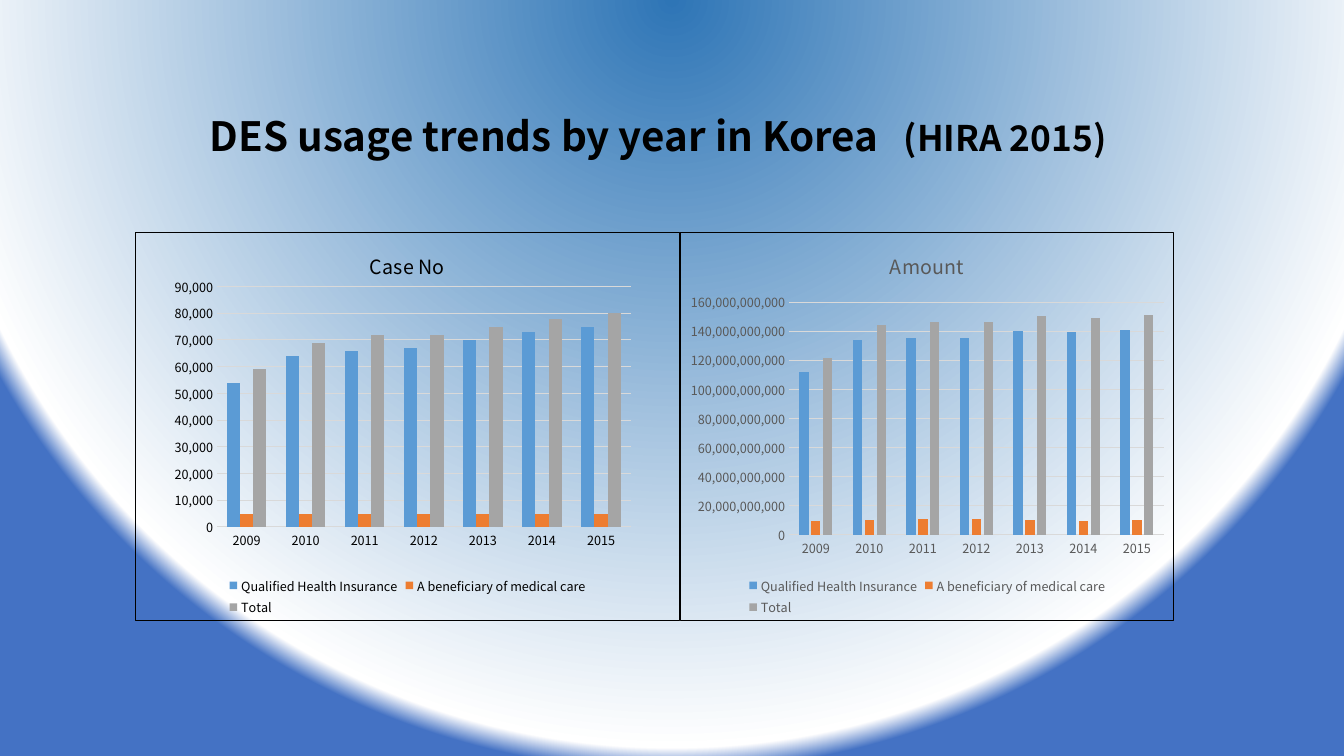
from pptx import Presentation
from pptx.chart.data import CategoryChartData
from pptx.dml.color import RGBColor
from pptx.enum.chart import XL_CHART_TYPE, XL_LEGEND_POSITION, XL_TICK_MARK
from pptx.enum.text import MSO_ANCHOR
from pptx.oxml import parse_xml
from pptx.oxml.ns import nsdecls, qn
from pptx.util import Cm, Pt

CLUSTERED = XL_CHART_TYPE.COLUMN_CLUSTERED
BOTTOM = XL_LEGEND_POSITION.BOTTOM
NO_TICK = XL_TICK_MARK.NONE
MIDDLE = MSO_ANCHOR.MIDDLE

COLORS = {
    "sky": "2E75B6", "white": "FFFFFF", "edge": "4472C4",
    "black": "000000", "grey": "595959", "grid": "D9D9D9",
    "insured": "5B9BD5", "beneficiary": "ED7D31", "total": "A5A5A5",
}
YEARS = [str(year) for year in range(2009, 2016)]
GROUPS = {
    "Qualified Health Insurance": "insured",
    "A beneficiary of medical care": "beneficiary",
    "Total": "total",
}
CASES = [
    [54000, 64000, 66000, 67000, 70000, 73000, 75000],
    [5000] * 7,
    [59000, 69000, 72000, 72000, 75000, 78000, 80000],
]
# Amounts in units of 100 million
AMOUNTS = [
    [1120, 1340, 1355, 1355, 1400, 1395, 1410],
    [94, 102, 109, 106, 102, 97, 103],
    [1215, 1445, 1465, 1460, 1505, 1490, 1510],
]


class UsageSlide:
    font_name = "Noto Sans CJK KR"

    def __init__(self, presentation):
        self.slide = presentation.slides.add_slide(presentation.slide_layouts[6])

    def style(self, font, size, color, bold=False):
        for name, value in {"name": self.font_name, "size": Pt(size), "bold": bold}.items():
            setattr(font, name, value)
        font.color.rgb = RGBColor.from_string(COLORS[color])

    def line(self, line, color):
        line.color.rgb = RGBColor.from_string(COLORS[color])
        line.width = Pt(0.75)

    def background(self, stops):
        stop_xml = "".join(
            f'<a:gs pos="{percent * 1000}"><a:srgbClr val="{COLORS[color]}"/></a:gs>'
            for percent, color in stops)
        self.slide.element.cSld.insert(0, parse_xml(
            f'<p:bg {nsdecls("p", "a")}><p:bgPr><a:gradFill rotWithShape="1">'
            f'<a:gsLst>{stop_xml}</a:gsLst><a:path path="circle">'
            '<a:fillToRect l="50000" t="-80000" r="50000" b="180000"/></a:path>'
            '</a:gradFill><a:effectLst/></p:bgPr></p:bg>'))

    def heading(self, parts, box, tab):
        frame = self.slide.shapes.add_textbox(*map(Cm, box)).text_frame
        frame.word_wrap = True
        frame.vertical_anchor = MIDDLE
        paragraph = frame.paragraphs[0]
        paragraph.line_spacing = 0.9
        paragraph._p.get_or_add_pPr().append(parse_xml(
            f'<a:tabLst {nsdecls("a")}><a:tab pos="{Cm(tab)}" algn="l"/></a:tabLst>'))
        for text, size in parts:
            run = paragraph.add_run()
            run.text = text
            self.style(run.font, size, "black", bold=True)

    def columns(self, title, values, box, plot_box, color, number_scale=1, **spacing):
        data = CategoryChartData(number_format="#,##0")
        data.categories = YEARS
        for group, amounts in zip(GROUPS, values):
            data.add_series(group, [amount * number_scale for amount in amounts])
        chart = self.slide.shapes.add_chart(CLUSTERED, *map(Cm, box), data).chart
        self.style(chart.font, 10, "black")

        # Title and legend
        chart.has_title = True
        chart.chart_title.text_frame.text = title
        chart.chart_title.include_in_layout = False
        self.style(chart.chart_title.text_frame.paragraphs[0].runs[0].font, 14, color)
        chart.has_legend = True
        chart.legend.position = BOTTOM
        chart.legend.include_in_layout = False
        self.style(chart.legend.font, 9, color)

        # Axes
        for axis in (chart.category_axis, chart.value_axis):
            axis.major_tick_mark = axis.minor_tick_mark = NO_TICK
            self.style(axis.tick_labels.font, 9, color)
        self.line(chart.category_axis.format.line, "grid")
        value_axis = chart.value_axis
        value_axis.format.line.fill.background()
        value_axis.has_major_gridlines = True
        self.line(value_axis.major_gridlines.format.line, "grid")
        value_axis.tick_labels.number_format = "#,##0"
        value_axis.tick_labels.number_format_is_linked = False

        # Columns
        plot = chart.plots[0]
        plot.vary_by_categories = False
        for name, value in spacing.items():
            setattr(plot, name, value)
        for series, fill in zip(plot.series, GROUPS.values()):
            series.format.fill.solid()
            series.format.fill.fore_color.rgb = RGBColor.from_string(COLORS[fill])

        # Plot position and chart border
        space = chart.element
        area = space.find(f".//{qn('c:plotArea')}")
        for layout in area.findall(qn("c:layout")):
            area.remove(layout)
        sides = "".join(f'<c:{side} val="{value}"/>'
                        for side, value in zip("xywh", plot_box))
        area.insert(0, parse_xml(
            f'<c:layout {nsdecls("c")}><c:manualLayout><c:layoutTarget val="inner"/>'
            '<c:xMode val="edge"/><c:yMode val="edge"/>'
            f'{sides}</c:manualLayout></c:layout>'))
        space.find(qn("c:txPr")).addprevious(parse_xml(
            f'<c:spPr {nsdecls("c", "a")}><a:noFill/><a:ln w="{Pt(0.75)}"><a:solidFill>'
            f'<a:srgbClr val="{COLORS["black"]}"/></a:solidFill></a:ln></c:spPr>'))


def main():
    presentation = Presentation()
    presentation.slide_width, presentation.slide_height = Cm(33.87), Cm(19.05)
    usage = UsageSlide(presentation)
    usage.background([(0, "sky"), (97, "white"), (100, "edge")])
    usage.heading([("DES usage trends by year in Korea\t", 28.8), ("(HIRA 2015)", 25.2)],
                  (5.03, 2.9, 28.83, 1.17), tab=17.5)

    # Adjoining charts
    left, top, height = 3.4, 5.84, 9.8
    case_width, amount_width = 13.74, 12.45
    usage.columns("Case No", CASES, (left, top, case_width, height),
                  (0.15, 0.14, 0.76, 0.62), "black", gap_width=150)
    usage.columns("Amount", AMOUNTS, (left + case_width, top, amount_width, height),
                  (0.22, 0.18, 0.76, 0.6), "grey", number_scale=10**8,
                  gap_width=219, overlap=-27)
    presentation.save("out.pptx")


if __name__ == "__main__":
    main()
